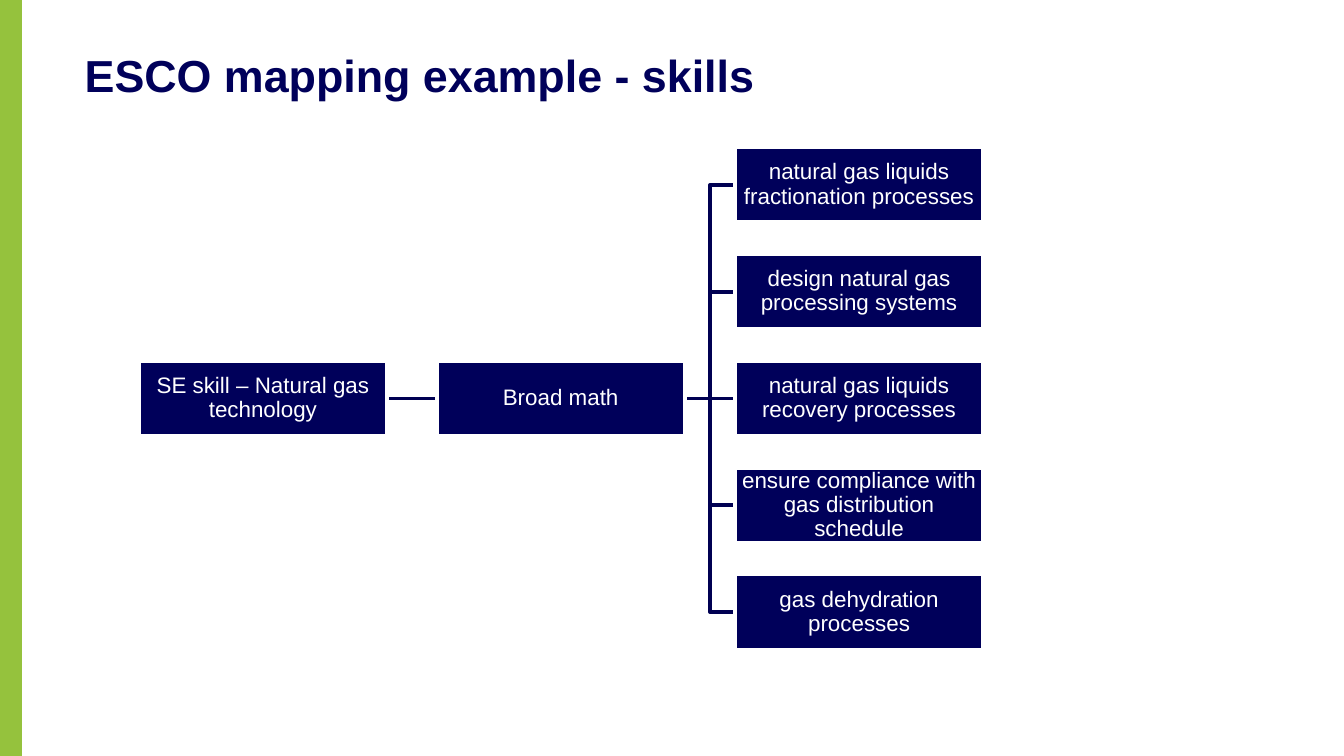
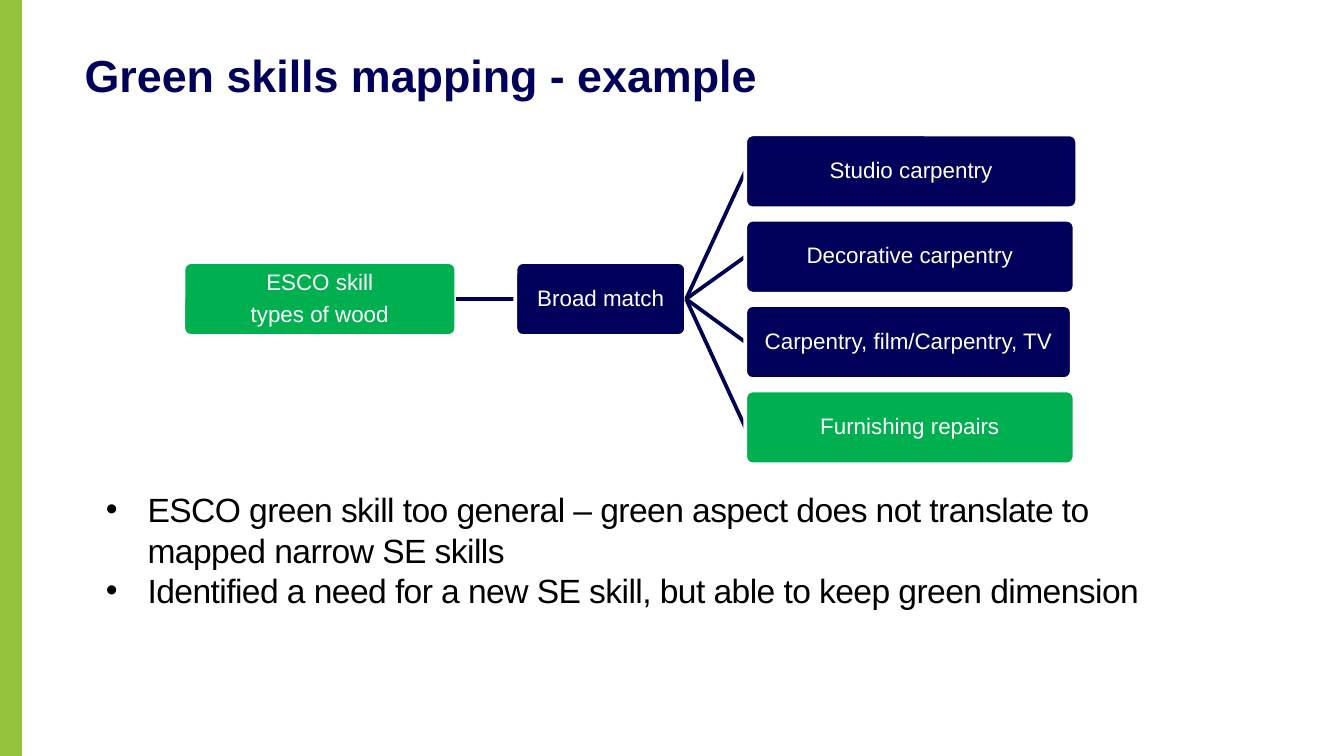
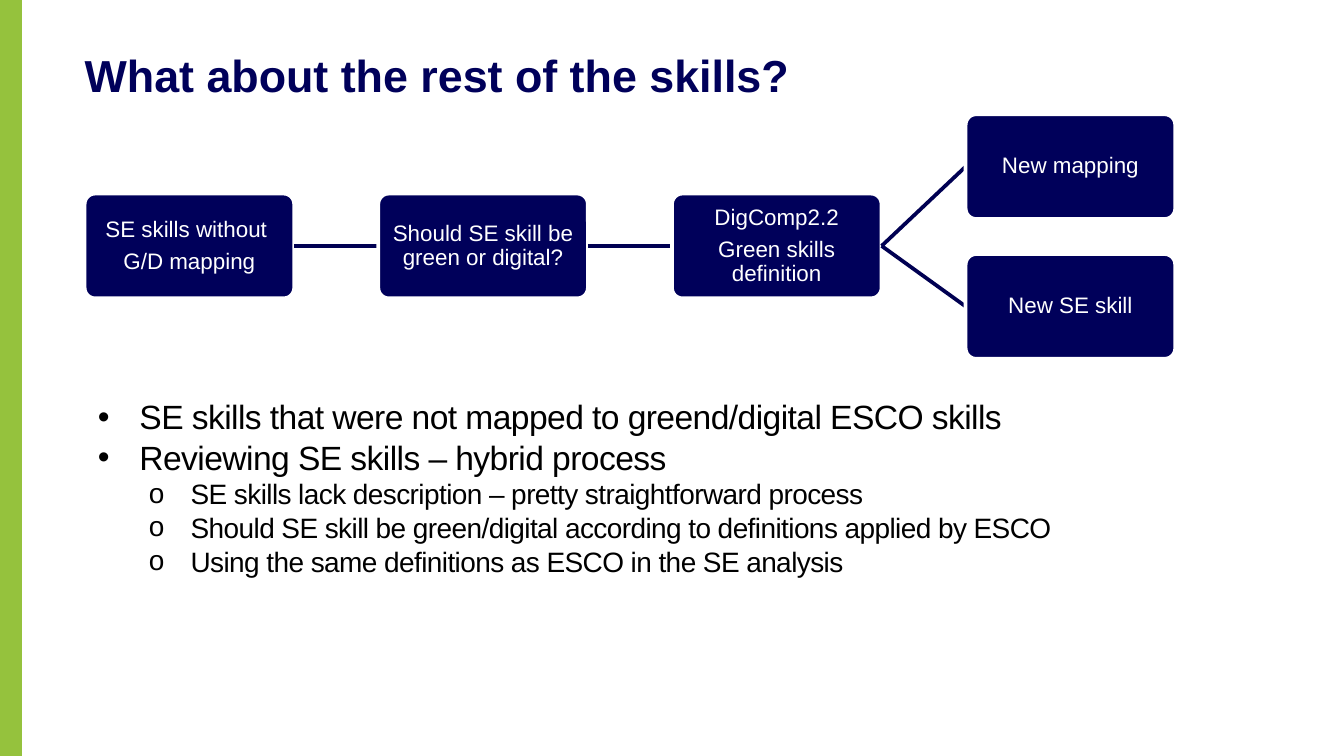
from lxml import etree
from pptx import Presentation
from pptx.dml.color import RGBColor
from pptx.enum.shapes import MSO_CONNECTOR, MSO_SHAPE
from pptx.enum.text import MSO_ANCHOR, PP_ALIGN
from pptx.oxml.ns import qn
from pptx.util import Pt

PX = 4572
FONT = "Arial"
NAVY = RGBColor(0x00, 0x00, 0x5A)
LINK_NAVY = RGBColor(0x00, 0x00, 0x52)
LIME = RGBColor(0x95, 0xC2, 0x3D)
GREEN = RGBColor(0x00, 0xB0, 0x50)
WHITE = RGBColor(0xFF, 0xFF, 0xFF)
BLACK = RGBColor(0x00, 0x00, 0x00)
RECTANGLE = MSO_SHAPE.RECTANGLE
ROUNDED = MSO_SHAPE.ROUNDED_RECTANGLE
STRAIGHT = MSO_CONNECTOR.STRAIGHT
MIDDLE = MSO_ANCHOR.MIDDLE
CENTER = PP_ALIGN.CENTER


def add_node(page, kind, left, top, width, height, lines, fill=NAVY):
    node = page.shapes.add_shape(kind, left * PX, top * PX, width * PX, height * PX)
    node.shadow.inherit = False
    node.fill.solid()
    node.fill.fore_color.rgb = fill
    node.line.color.rgb = WHITE
    node.line.width = Pt(2)
    if kind == ROUNDED:
        node.adjustments[0] = 0.1
    frame = node.text_frame
    frame.word_wrap = True
    frame.vertical_anchor = MIDDLE
    frame.margin_left = frame.margin_right = frame.margin_top = frame.margin_bottom = 2 * PX
    for index, line in enumerate(lines):
        para = frame.add_paragraph() if index else frame.paragraphs[0]
        para.alignment = CENTER
        para.line_spacing = 0.9
        para.space_after = Pt(4.2)
        span = para.add_run()
        span.text = line
        span.font.name = FONT
        span.font.size = Pt(12)
        span.font.color.rgb = WHITE


def add_link(page, start_x, start_y, end_x, end_y):
    link = page.shapes.add_connector(STRAIGHT, start_x * PX, start_y * PX, end_x * PX, end_y * PX)
    link.line.color.rgb = LINK_NAVY
    link.line.width = Pt(2)
    etree.SubElement(link._element.spPr, qn("a:effectLst"))


deck = Presentation()
deck.slide_width = 2000 * PX
deck.slide_height = 1125 * PX

titles = [
    "ESCO mapping example - skills",
    "Green skills mapping - example",
    "What about the rest of the skills?",
]
pages = []
for title in titles:
    page = deck.slides.add_slide(deck.slide_layouts[6])
    pages.append(page)
    band = page.shapes.add_shape(RECTANGLE, 0, 0, 32 * PX, 1125 * PX)
    band.shadow.inherit = False
    band.fill.solid()
    band.fill.fore_color.rgb = LIME
    band.line.color.rgb = LIME
    band.line.width = Pt(1)
    box = page.shapes.add_textbox(126 * PX, 71 * PX, 1624 * PX, 148 * PX)
    frame = box.text_frame
    frame.word_wrap = True
    frame.margin_left = frame.margin_right = frame.margin_top = frame.margin_bottom = 0
    span = frame.paragraphs[0].add_run()
    span.text = title
    span.font.name = FONT
    span.font.size = Pt(24)
    span.font.bold = True
    span.font.color.rgb = NAVY
skills_page, green_page, rest_page = pages

gas_skills = [
    "natural gas liquids fractionation processes",
    "design natural gas processing systems",
    "natural gas liquids recovery processes",
    "ensure compliance with gas distribution schedule",
    "gas dehydration processes",
]
add_link(skills_page, 576, 593, 650, 593)
add_link(skills_page, 1020, 593, 1094, 593)
for row, skill in enumerate(gas_skills):
    top = 219 + row * 159
    branch_y = top + 56
    if branch_y != 593:
        builder = skills_page.shapes.build_freeform(1020, 593, scale=PX)
        builder.add_line_segments([(1057, 593), (1057, branch_y), (1094, branch_y)], close=False)
        branch = builder.convert_to_shape()
        branch.shadow.inherit = False
        branch.fill.background()
        branch.line.color.rgb = LINK_NAVY
        branch.line.width = Pt(2)
    add_node(skills_page, RECTANGLE, 1094, top, 369, 112, [skill])
add_node(skills_page, RECTANGLE, 207, 537, 369, 112, ["SE skill – Natural gas technology"])
add_node(skills_page, RECTANGLE, 650, 537, 369, 112, ["Broad math"])

carpentry_skills = [
    ("Studio carpentry", 494, NAVY),
    ("Decorative carpentry", 490, NAVY),
    ("Carpentry, film/Carpentry, TV", 486, NAVY),
    ("Furnishing repairs", 490, GREEN),
]
add_node(green_page, ROUNDED, 273, 390, 406, 110, ["ESCO skill", "types of wood"], GREEN)
add_link(green_page, 679, 445, 767, 445)
add_node(green_page, ROUNDED, 767, 390, 254, 110, ["Broad match"])
for row, (skill, width, fill) in enumerate(carpentry_skills):
    top = 200 + row * 127
    add_link(green_page, 1021, 445, 1109, top + 55)
    add_node(green_page, ROUNDED, 1109, top, width, 110, [skill], fill)

steps = [
    ["SE skills without ", "G/D mapping"],
    ["Should SE skill be green or digital?"],
    ["DigComp2.2", "Green skills definition"],
]
for column, lines in enumerate(steps):
    left = 126 + column * 437
    if column:
        add_link(rest_page, left - 125, 366, left, 366)
    add_node(rest_page, ROUNDED, left, 288, 312, 156, lines)
for result, top in [("New mapping", 170), ("New SE skill", 378)]:
    add_link(rest_page, 1312, 366, 1437, top + 78)
    add_node(rest_page, ROUNDED, 1437, top, 312, 156, [result])

bullet_levels = [("•", 62, 18), ("o", 138, 15)]
bullet_boxes = [
    (green_page, 138, 718, 202, [
        (0, "ESCO green skill too general – green aspect does not translate to mapped narrow SE skills"),
        (0, "Identified a need for a new SE skill, but able to keep green dimension"),
    ]),
    (rest_page, 126, 580, 292, [
        (0, "SE skills that were not mapped to greend/digital ESCO skills"),
        (0, "Reviewing SE skills – hybrid process"),
        (1, "SE skills lack description – pretty straightforward process"),
        (1, "Should SE skill be green/digital according to definitions applied by ESCO"),
        (1, "Using the same definitions as ESCO in the SE analysis"),
    ]),
]
for page, left, top, height, bullets in bullet_boxes:
    box = page.shapes.add_textbox(left * PX, top * PX, 1600 * PX, height * PX)
    frame = box.text_frame
    frame.word_wrap = True
    for index, (level, text) in enumerate(bullets):
        mark, indent, size = bullet_levels[level]
        para = frame.add_paragraph() if index else frame.paragraphs[0]
        para.level = level
        properties = para._p.get_or_add_pPr()
        properties.set("marL", str(indent * PX))
        properties.set("indent", str(-62 * PX))
        etree.SubElement(properties, qn("a:buFont"), typeface=FONT)
        etree.SubElement(properties, qn("a:buChar"), char=mark)
        span = para.add_run()
        span.text = text
        span.font.name = FONT
        span.font.size = Pt(size)
        span.font.color.rgb = BLACK
        span.font._element.set("spc", "-30")

deck.save("out.pptx")
